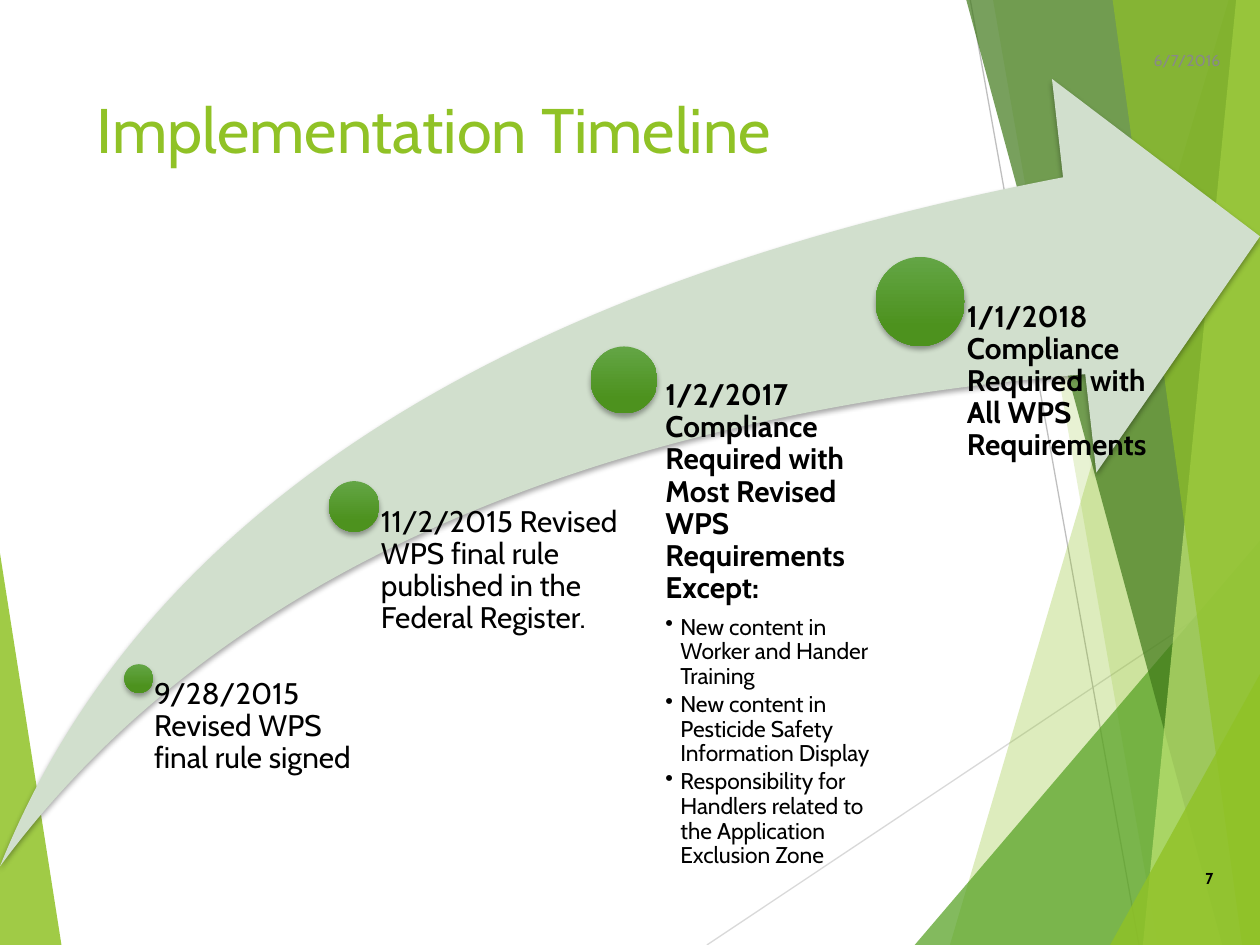
from lxml.etree import SubElement
from pptx import Presentation
from pptx.dml.color import RGBColor
from pptx.enum.shapes import MSO_CONNECTOR, MSO_SHAPE
from pptx.enum.text import MSO_ANCHOR, PP_ALIGN
from pptx.oxml.ns import qn
from pptx.util import Cm, Pt

W, H = 25.4, 19.05
FONT = "Cabin"
COLORS = {
    "lime": "90C226", "green": "54A021", "forest": "3F7819", "pale": "C0E474",
    "arrow": "D1DFCD", "dot_top": "63A545", "dot_bottom": "4D921E",
    "text": "000000", "date": "898989", "line": "D9D9D9", "line_dark": "BFBFBF",
}


def strip(top, bottom):
    """Outline of a panel from a slanted left edge to the right slide edge."""
    return [(top, 0), (bottom, H), (W, H), (W, 0)]


def corner(left, top):
    """Outline of a triangle in the bottom right corner."""
    return [(left, H), (W, top), (W, H)]


# Background: lines as (start, end, colour), panels as (outline, colour, opacity %)
LINES = [
    ((14.25, H), (W, 11.61), "line"),
    ((19.56, 0), (22.96, H), "line_dark"),
]
LEFT_PANEL = ([(0, 11.15), (1.24, H), (0, H)], "lime", 85)
RIGHT_PANELS = [
    (strip(24.77, 19.15), "lime", 30),
    (strip(20.02, 23.34), "lime", 20),
    (corner(18.44, 10.9), "green", 72),
    (strip(19.48, 24.64), "forest", 70),
    (strip(24.92, 23.04), "pale", 70),
    (strip(22.43, 25.04), "lime", 65),
    (corner(22.38, 13.59), "lime", 80),
]

# Milestones: dot centre x, y, diameter, label left, label width, bold, text, bullets
MILESTONES = [
    (2.8, 13.68, 0.58, 2.8, 4.34, False,
     "9/28/2015 Revised WPS final rule signed", []),
    (7.14, 10.21, 1.02, 7.14, 5.33, False,
     "11/2/2015 Revised WPS final rule published in the Federal Register.", []),
    (12.58, 7.66, 1.35, 12.7, 5.08, True,
     "1/2/2017 Compliance Required with Most Revised WPS Requirements Except:",
     ["New content in Worker and Hander Training",
      "New content in Pesticide Safety Information Display",
      "Responsibility for Handlers related to the Application Exclusion Zone"]),
    (18.55, 6.08, 1.8, 18.54, 5.33, True,
     "1/1/2018 Compliance Required with All WPS Requirements", []),
]
LABEL_BOTTOM = 17.47
INSET_RATIO = 0.53  # label inset relative to the dot diameter


def rgb(name):
    return RGBColor.from_string(COLORS[name])


def write(p, text, size, color="text", bold=False, align=PP_ALIGN.LEFT,
          spacing=None, after=0, bullet=False):
    r = p.add_run()
    r.text = text
    r.font.name, r.font.size, r.font.bold = FONT, Pt(size), bold
    r.font.color.rgb = rgb(color)
    p.alignment, p.space_after = align, Pt(after)
    if spacing:
        p.line_spacing = spacing
    if bullet:
        pPr = p._p.get_or_add_pPr()
        pPr.set("marL", str(Cm(0.3)))
        pPr.set("indent", str(-Cm(0.3)))
        SubElement(pPr, qn("a:buChar"), char="•")


def add_box(left, top, width, height):
    sp = slide.shapes.add_textbox(Cm(left), Cm(top), Cm(width), Cm(height))
    sp.text_frame.word_wrap = True
    return sp.text_frame


def add_panel(points, color, opacity):
    (x, y), *rest = [(Cm(px), Cm(py)) for px, py in points]
    builder = slide.shapes.build_freeform(x, y)
    builder.add_line_segments(rest, close=True)
    sp = builder.convert_to_shape()
    sp.shadow.inherit = False
    sp.line.fill.background()
    sp.fill.solid()
    sp.fill.fore_color.rgb = rgb(color)
    clr = sp.fill._xPr.find(".//" + qn("a:srgbClr"))
    SubElement(clr, qn("a:alpha"), val=str(opacity * 1000))


def add_shadowed(kind, left, top, width, height):
    sp = slide.shapes.add_shape(kind, Cm(left), Cm(top), Cm(width), Cm(height))
    sp.line.fill.background()
    sp.shadow.inherit = False
    effects = sp._element.spPr.find(qn("a:effectLst"))
    shadow = SubElement(effects, qn("a:outerShdw"), blurRad=str(Pt(3)),
                        dist=str(Pt(2)), dir="5400000", rotWithShape="0")
    clr = SubElement(shadow, qn("a:srgbClr"), val=COLORS["text"])
    SubElement(clr, qn("a:alpha"), val="35000")
    return sp


prs = Presentation()
prs.slide_width, prs.slide_height = Cm(W), Cm(H)
slide = prs.slides.add_slide(prs.slide_layouts[5])
title = slide.shapes.title

# Background
add_panel(*LEFT_PANEL)
for start, end, color in LINES:
    line = slide.shapes.add_connector(MSO_CONNECTOR.STRAIGHT,
                                      *(Cm(v) for v in start + end))
    line.line.color.rgb = rgb(color)
    line.line.width = Pt(0.75)
    SubElement(line._element.spPr, qn("a:effectLst"))
for panel in RIGHT_PANELS:
    add_panel(*panel)

# Title
title.left, title.top, title.width, title.height = Cm(1.7), Cm(1.7), Cm(17.63), Cm(3.66)
title.text_frame.vertical_anchor = MSO_ANCHOR.TOP
write(title.text_frame.paragraphs[0], "Implementation Timeline", 36, "lime")

# Date
tf = add_box(21.8, 0.7, 3.05, 1.02)
tf.vertical_anchor = MSO_ANCHOR.MIDDLE
write(tf.paragraphs[0], "6/7/2016", 9, "date", align=PP_ALIGN.RIGHT)

# Timeline arrow
arrow = add_shadowed(MSO_SHAPE.SWOOSH_ARROW, 0, 1.59, W, W * 0.625)
arrow.adjustments[0] = arrow.adjustments[1] = 0.25
arrow.fill.solid()
arrow.fill.fore_color.rgb = rgb("arrow")

# Milestone dots and labels
for x, y, d, left, width, bold, text, bullets in MILESTONES:
    dot = add_shadowed(MSO_SHAPE.OVAL, x - d / 2, y - d / 2, d, d)
    dot.fill.gradient()
    dot.fill.gradient_angle = 270
    for stop, color, pos in zip(dot.fill.gradient_stops,
                                ("dot_top", "dot_bottom"), (0, 0.78)):
        stop.color.rgb, stop.position = rgb(color), pos

    tf = add_box(left, y, width, LABEL_BOTTOM - y)
    tf.margin_left = Cm(INSET_RATIO * d)
    tf.margin_top = tf.margin_right = tf.margin_bottom = 0
    write(tf.paragraphs[0], text, 17, bold=bold, spacing=0.9, after=6)
    for item in bullets:
        write(tf.add_paragraph(), item, 13, spacing=0.9, after=2, bullet=True)

# Slide number
tf = add_box(23.29, 17.2, 1.42, 1.02)
tf.vertical_anchor = MSO_ANCHOR.MIDDLE
write(tf.paragraphs[0], "7", 9, bold=True, align=PP_ALIGN.RIGHT)

prs.save("out.pptx")
